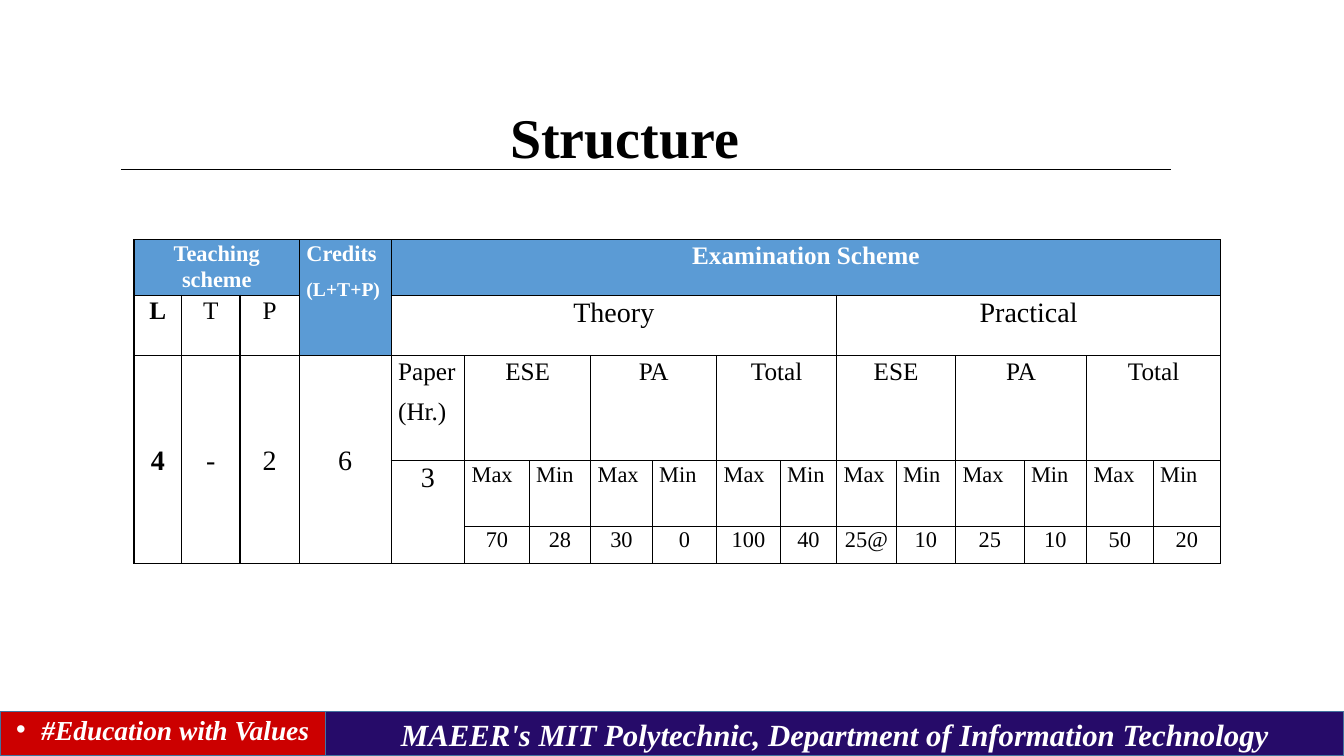
from lxml import etree
from pptx import Presentation
from pptx.dml.color import RGBColor
from pptx.enum import shapes, text
from pptx.oxml import ns
from pptx.util import Inches, Pt

FONT = "Times New Roman"
BLACK, WHITE, BLUE = "000000", "FFFFFF", "5B9BD5"
LEFT, MID = text.PP_ALIGN.LEFT, text.PP_ALIGN.CENTER
COLS = [0.47, 0.58, 0.59, 0.91, 0.73, 0.64, 0.61, 0.61, 0.64,
        0.63, 0.56, 0.59, 0.59, 0.68, 0.62, 0.66, 0.67]
ROWS = [0.55, 0.6, 1.04, 0.65, 0.37]
MARKS = ["70", "28", "30", "0", "100", "40",
         "25@", "10", "25", "10", "50", "20"]


def rgb(code):
    return RGBColor.from_string(code)


def style(para, size, color=BLACK, bold=False, italic=False, align=MID):
    para.alignment = align
    font = para.font
    font.name, font.size = FONT, Pt(size)
    font.bold, font.italic = bold, italic
    font.color.rgb = rgb(color)


def title(slide, x, y, w, h):
    box = slide.shapes.add_textbox(*map(Inches, (x, y, w, h)))
    box.text_frame.word_wrap = True
    para = box.text_frame.paragraphs[0]
    para.text = "Structure"
    style(para, 40, bold=True)
    rule = slide.shapes.add_connector(
        shapes.MSO_CONNECTOR.STRAIGHT,
        *map(Inches, (x - 1.58, y + 0.71, x + w + 2, y + 0.71)))
    rule.line.width = Pt(0.5)
    rule.line.color.rgb = rgb(BLACK)
    etree.SubElement(rule._element.spPr, ns.qn("a:effectLst"))


def frame(cell):
    """Give a cell thin black borders and tight margins."""
    cell.margin_left = cell.margin_right = Inches(0.07)
    cell.margin_top = cell.margin_bottom = 0
    props = cell._tc.get_or_add_tcPr()
    for side in ("lnL", "lnR", "lnT", "lnB"):
        edge = etree.SubElement(props, ns.qn("a:" + side), w=str(Pt(1)))
        fill = etree.SubElement(edge, ns.qn("a:solidFill"))
        etree.SubElement(fill, ns.qn("a:srgbClr"), val=BLACK)
    cell.fill.solid()
    cell.fill.fore_color.rgb = rgb(WHITE)


def scheme(slide, x, y):
    """Place the table of teaching and examination marks."""
    grid = slide.shapes.add_table(
        len(ROWS), len(COLS),
        *map(Inches, (x, y, sum(COLS), sum(ROWS)))).table
    grid.first_row = grid.horz_banding = False
    for col, width in zip(grid.columns, COLS):
        col.width = Inches(width)
    for row, height in zip(grid.rows, ROWS):
        row.height = Inches(height)
    for cell in grid.iter_cells():
        frame(cell)

    def put(row, col, words, size, tall=1, wide=1, align=MID, bold=False,
            head=False):
        cell = grid.cell(row, col)
        if tall * wide > 1:
            cell.merge(grid.cell(row + tall - 1, col + wide - 1))
        if head:
            cell.fill.fore_color.rgb = rgb(BLUE)
        cell.text = words
        for para in cell.text_frame.paragraphs:
            style(para, size, WHITE if head else BLACK, bold or head,
                  align=align)
            para.line_spacing, para.space_after = 1.06, Pt(8)
        return cell

    put(0, 0, "Teaching scheme", 16, wide=3, head=True)
    credit = put(0, 3, "Credits\n(L+T+P)", 16, tall=2, align=LEFT, head=True)
    credit.text_frame.paragraphs[1].font.size = Pt(14)
    put(0, 4, "Examination Scheme", 18, wide=13, head=True)
    for col, name in enumerate("LTP"):
        put(1, col, name, 18, bold=col == 0)
    put(1, 4, "Theory", 20, wide=7)
    put(1, 11, "Practical", 20, wide=6)
    for col, hours in enumerate("4-26"):
        cell = put(2, col, hours, 20, tall=3, bold=col == 0)
        cell.vertical_anchor = text.MSO_ANCHOR.MIDDLE
        cell.text_frame.paragraphs[0].space_after = 0
    put(2, 4, "Paper\n(Hr.)", 18, align=LEFT)
    put(3, 4, "3", 20, tall=2)
    for i, name in enumerate(["ESE", "PA", "Total"] * 2):
        put(2, 5 + 2 * i, name, 18, wide=2)
    for i, mark in enumerate(MARKS):
        put(3, 5 + i, ("Max", "Min")[i % 2], 16, align=LEFT)
        put(4, 5 + i, mark, 16)


def band(slide, x, y, w, h, words, fill, size, bullet=False):
    bar = slide.shapes.add_shape(shapes.MSO_SHAPE.RECTANGLE,
                                 *map(Inches, (x, y, w, h)))
    bar.shadow.inherit = False
    bar.fill.solid()
    bar.fill.fore_color.rgb = rgb(fill)
    bar.line.color.rgb = rgb("43739E")
    bar.line.width = Pt(1)
    body = bar.text_frame
    body.word_wrap = True
    body.vertical_anchor = text.MSO_ANCHOR.MIDDLE
    para = body.paragraphs[0]
    para.text = words
    if bullet:
        props = para._p.get_or_add_pPr()
        props.set("marL", str(Inches(0.25)))
        props.set("indent", str(-Inches(0.25)))
        etree.SubElement(props, ns.qn("a:buFont"), typeface="Arial")
        etree.SubElement(props, ns.qn("a:buChar"), char="•")
        para.line_spacing = 0.7
    style(para, size, WHITE, bold=True, italic=True)


def footer(slide, x, y, w, h):
    split = 3.23
    band(slide, x, y, split, h, "#Education with Values", "CC0000", 19.6,
         bullet=True)
    band(slide, x + split, y, w - split, h,
         "MAEER's MIT Polytechnic, Department of Information Technology",
         "260B69", 22)


def main():
    deck = Presentation()
    deck.slide_width, deck.slide_height = Inches(13.33), Inches(7.5)
    slide = deck.slides.add_slide(deck.slide_layouts[6])
    footer(slide, 0, 7.06, 13.33, 0.44)
    scheme(slide, 1.33, 2.38)
    title(slide, 2.78, 0.97, 6.83, 0.77)
    deck.save("out.pptx")


if __name__ == "__main__":
    main()
